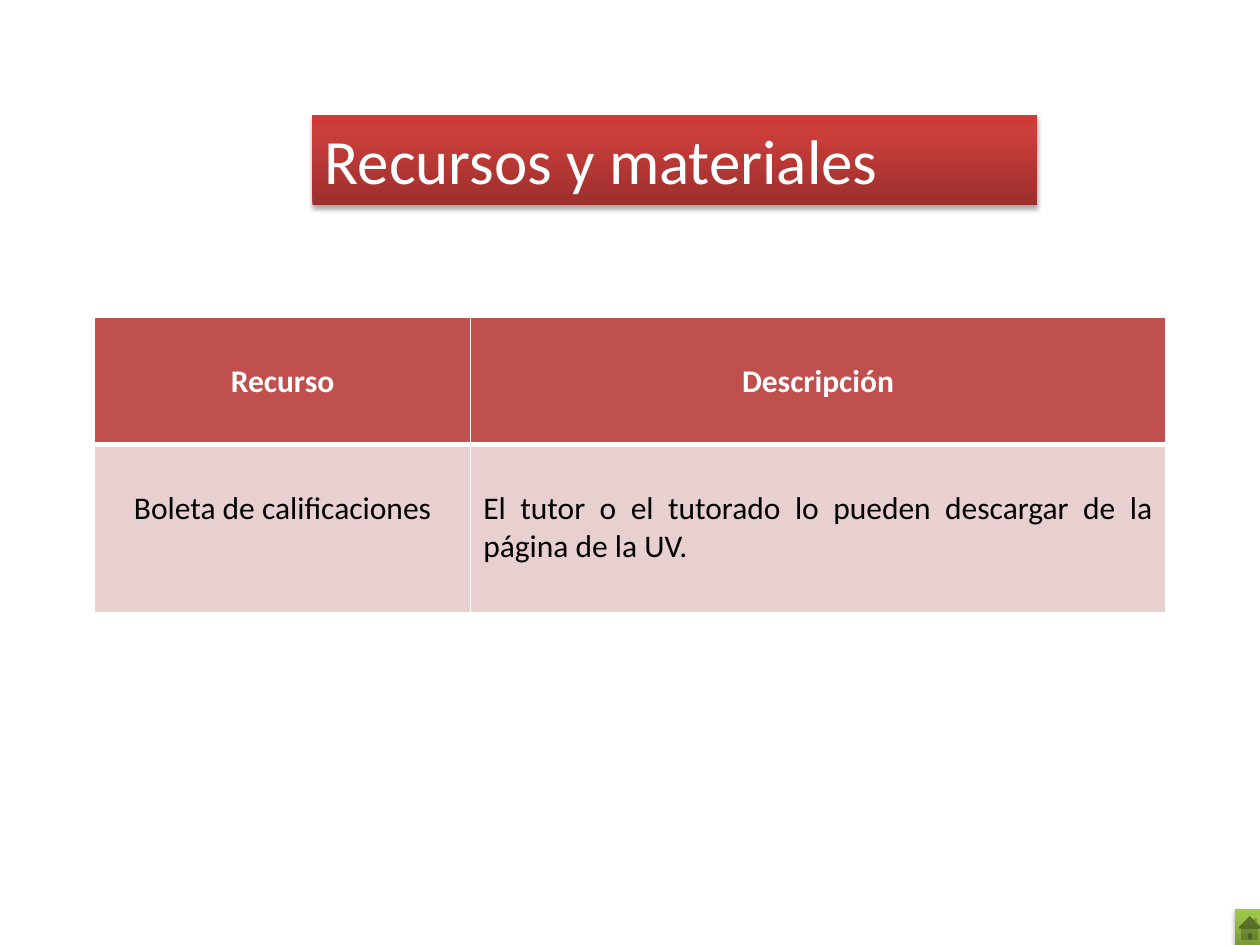
from copy import deepcopy
from dataclasses import dataclass
from pptx import Presentation, util as u
from pptx.dml.color import RGBColor
from pptx.enum import shapes, text
from pptx.oxml import parse_xml
from pptx.oxml.ns import nsdecls, qn

Pt = u.Pt
Align = text.PP_ALIGN


@dataclass(frozen=True)
class Theme:
    font: str = "Calibri"
    big: int = 36
    body: int = 18
    white: str = "FFFFFF"
    black: str = "000000"
    head: str = "C0504D"
    pale: str = "E8D0D0"
    red: tuple = ("9C2F2D", "CB3E3A", "CE3B37")
    green: tuple = ("779737", "9BC348", "9DC746")


class Deck:
    """Holds the theme and the current slide, and draws each kind of element."""

    def __init__(self, theme):
        self.theme = theme
        self.prs = Presentation()
        self.prs.slide_width, self.prs.slide_height = Pt(720), Pt(540)
        self.slide = self.prs.slides.add_slide(self.prs.slide_layouts[6])

    def label(self, frame, words, size, color, align, bold=False):
        frame.text = words
        para = frame.paragraphs[0]
        para.alignment = align
        font = para.runs[0].font
        font.name, font.size, font.bold = self.theme.font, Pt(size), bold
        font.color.rgb = RGBColor.from_string(color)

    def shade(self, fill, colors, props):
        fill.gradient()
        fill.gradient_angle = 90
        stops = props.find(qn("a:gradFill")).find(qn("a:gsLst"))
        stops.append(deepcopy(stops[-1]))
        for stop, spot, color in zip(fill.gradient_stops, (0, 0.8, 1), colors):
            stop.position = spot
            stop.color.rgb = RGBColor.from_string(color)

    def shadow(self, shape):
        shape.shadow.inherit = False
        shape._element.spPr.find(qn("a:effectLst")).append(parse_xml(
            f'<a:outerShdw {nsdecls("a")} blurRad="{Pt(3.1)}" dist="{Pt(1.8)}" '
            'dir="5400000" rotWithShape="0"><a:srgbClr val="000000">'
            '<a:alpha val="35000"/></a:srgbClr></a:outerShdw>'))

    def block(self, kind, box, colors):
        shape = self.slide.shapes.add_shape(kind, *map(Pt, box))
        self.shade(shape.fill, colors, shape._element.spPr)
        shape.line.fill.background()
        self.shadow(shape)
        return shape

    def title(self, words, box):
        frame = self.block(shapes.MSO_SHAPE.RECTANGLE, box, self.theme.red).text_frame
        frame.word_wrap = True
        frame.vertical_anchor = text.MSO_ANCHOR.TOP
        self.label(frame, words, self.theme.big, self.theme.white, Align.LEFT)

    def edge(self, cell, widths):
        props = cell._tc.get_or_add_tcPr()
        for side, width in zip("LRTB", widths):
            props.append(parse_xml(
                f'<a:ln{side} {nsdecls("a")} w="{Pt(width)}"><a:solidFill>'
                f'<a:srgbClr val="{self.theme.white}"/></a:solidFill></a:ln{side}>'))

    def cell(self, cell, words, head, align):
        look = self.theme
        self.edge(cell, (1, 1, 1, 3) if head else (1, 1, 3, 1))
        cell.fill.solid()
        cell.fill.fore_color.rgb = RGBColor.from_string(look.head if head else look.pale)
        cell.margin_top = Pt(25.6)
        color = look.white if head else look.black
        self.label(cell.text_frame, words, look.body, color, align, head)

    def table(self, rows, box, wide, high):
        grid = self.slide.shapes.add_table(len(rows), len(wide), *map(Pt, box)).table
        for col, width in zip(grid.columns, wide):
            col.width = Pt(width)
        for r, (row, height) in enumerate(zip(rows, high)):
            grid.rows[r].height = Pt(height)
            for c, words in enumerate(row):
                align = Align.JUSTIFY if r and c else Align.CENTER
                self.cell(grid.cell(r, c), words, r == 0, align)

    def home(self, box):
        self.block(shapes.MSO_SHAPE.ACTION_BUTTON_HOME, box, self.theme.green)


def main():
    deck = Deck(Theme())
    rows = [
        ("Recurso", "Descripción"),
        ("Boleta de calificaciones",
         "El tutor o el tutorado lo pueden descargar de la página de la UV."),
    ]
    deck.table(rows, (54, 181.5, 612, 168.5), (215, 397), (72.5, 96))
    deck.title("Recursos y materiales", (178.5, 66, 414, 51))
    deck.home((705.6, 519.2, 17.3, 22.3))
    deck.prs.save("out.pptx")


if __name__ == "__main__":
    main()
